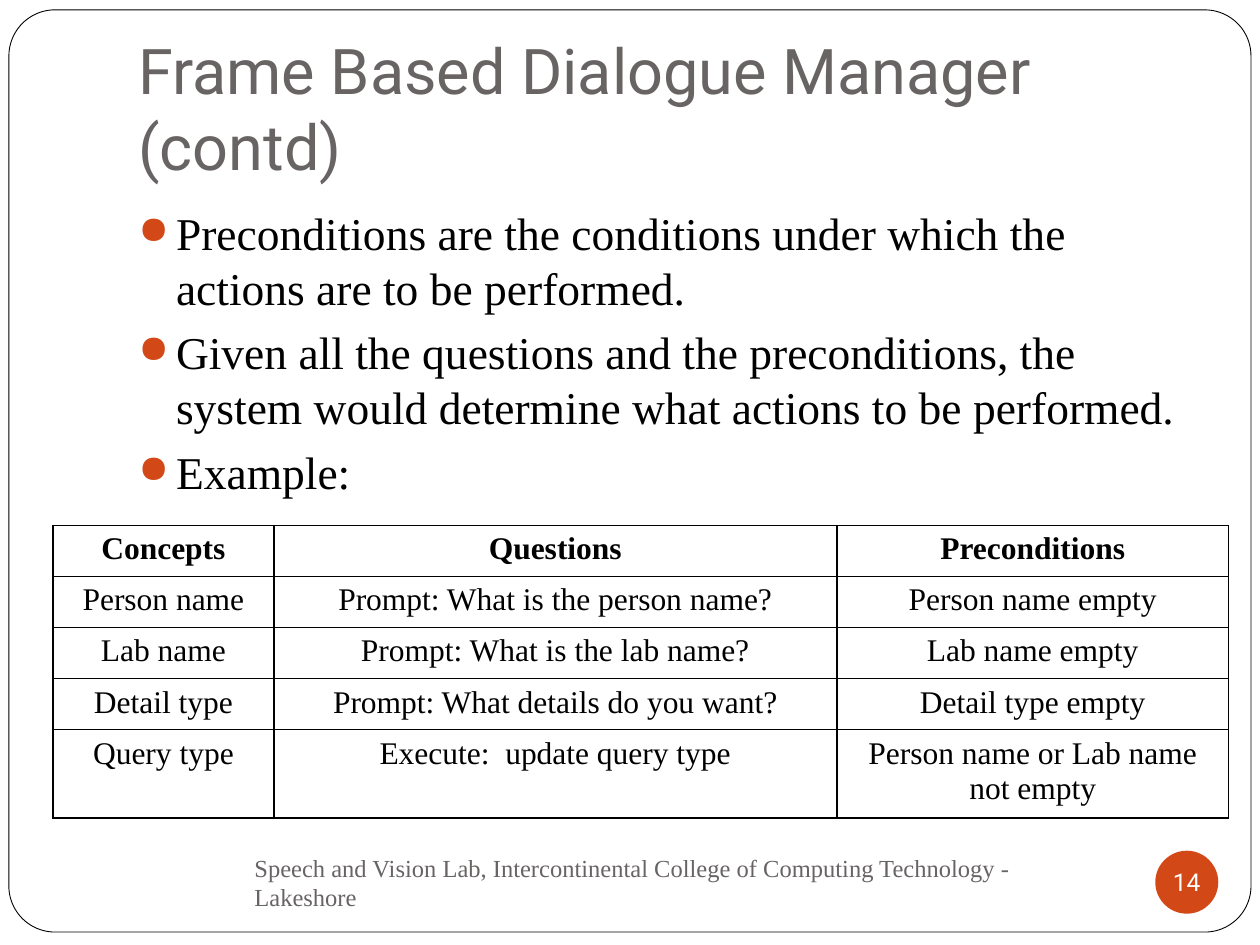
import lxml.etree
import pptx
import pptx.dml.color
import pptx.enum.shapes
import pptx.enum.text
import pptx.oxml.ns
import pptx.util
from pptx.util import Cm

RGBColor = pptx.dml.color.RGBColor
Shape = pptx.enum.shapes.MSO_SHAPE
Align = pptx.enum.text.PP_ALIGN
Anchor = pptx.enum.text.MSO_ANCHOR
qn = pptx.oxml.ns.qn

WHITE = RGBColor(0xFF, 0xFF, 0xFF)
BLACK = RGBColor(0, 0, 0)
GREY = RGBColor(0x69, 0x64, 0x64)
ORANGE = RGBColor(0xD3, 0x48, 0x17)
SERIF = "Times New Roman"
SANS = "Roboto"

TITLE = "Frame Based Dialogue Manager (contd)"
FOOTER = "Speech and Vision Lab, Intercontinental College of Computing Technology - Lakeshore"
POINTS = [
    "Preconditions are the conditions under which the actions are to be performed.",
    "Given all the questions and the preconditions, the system would determine "
    "what actions to be performed.",
    "Example:",
]
ROWS = [
    ("Concepts", "Questions", "Preconditions"),
    ("Person name", "Prompt: What is the person name?", "Person name empty"),
    ("Lab name", "Prompt: What is the lab name?", "Lab name empty"),
    ("Detail type", "Prompt: What details do you want?", "Detail type empty"),
    ("Query type", "Execute:  update query type", "Person name or Lab name not empty"),
]
COLUMN_WIDTHS = [Cm(4.45), Cm(11.35), Cm(7.9)]
ROW_HEIGHTS = [Cm(1.03)] * 4 + [Cm(1.67)]


def write(para, text, *, size, font=SERIF, color=BLACK, bold=False, align=Align.LEFT):
    para.alignment = align
    span = para.add_run()
    span.text = text
    span.font.size = pptx.util.Pt(size)
    span.font.name = font
    span.font.color.rgb = color
    span.font.bold = bold


def add_shape(page, kind, place, fill, line=None):
    shape = page.shapes.add_shape(kind, *place)
    shape.shadow.inherit = False
    shape.fill.solid()
    shape.fill.fore_color.rgb = fill
    if line is None:
        shape.line.fill.background()
    else:
        shape.line.color.rgb = line
        shape.line.width = pptx.util.Pt(0.5)
    return shape


def add_text_box(page, place, anchor):
    frame = page.shapes.add_textbox(*place).text_frame
    frame.word_wrap = True
    frame.vertical_anchor = anchor
    return frame


def add_bullet(para):
    """Give the paragraph a hanging orange dot."""
    properties = para._p.get_or_add_pPr()
    properties.set("marL", str(Cm(0.76)))
    properties.set("indent", str(-Cm(0.76)))
    color = lxml.etree.SubElement(properties, qn("a:buClr"))
    lxml.etree.SubElement(color, qn("a:srgbClr"), val=str(ORANGE))
    lxml.etree.SubElement(properties, qn("a:buSzPct"), val="85000")
    lxml.etree.SubElement(properties, qn("a:buChar"), char="●")


def add_bullets(page, place, points):
    frame = add_text_box(page, place, Anchor.TOP)
    for index, point in enumerate(points):
        para = frame.add_paragraph() if index else frame.paragraphs[0]
        para.space_before = pptx.util.Pt(5.8)
        add_bullet(para)
        write(para, point, size=26)


def add_borders(cell):
    properties = cell._tc.get_or_add_tcPr()
    for index, side in enumerate(("a:lnL", "a:lnR", "a:lnT", "a:lnB")):
        border = lxml.etree.Element(qn(side), w=str(pptx.util.Pt(1)))
        fill = lxml.etree.SubElement(border, qn("a:solidFill"))
        lxml.etree.SubElement(fill, qn("a:srgbClr"), val=str(BLACK))
        properties.insert(index, border)


def add_concept_table(page, left, top):
    table = page.shapes.add_table(
        len(ROWS), len(COLUMN_WIDTHS), left, top, sum(COLUMN_WIDTHS), sum(ROW_HEIGHTS)
    ).table
    for column, width in zip(table.columns, COLUMN_WIDTHS):
        column.width = width
    for index, (row, height, texts) in enumerate(zip(table.rows, ROW_HEIGHTS, ROWS)):
        row.height = height
        for cell, text in zip(row.cells, texts):
            cell.fill.solid()
            cell.fill.fore_color.rgb = WHITE
            add_borders(cell)
            write(cell.text_frame.paragraphs[0], text, size=18,
                  bold=index == 0, align=Align.CENTER)


def add_page_number(page, place, number):
    badge = add_shape(page, Shape.OVAL, place, ORANGE)
    frame = badge.text_frame
    frame.word_wrap = False
    frame.vertical_anchor = Anchor.MIDDLE
    frame.margin_left = frame.margin_right = frame.margin_top = frame.margin_bottom = 0
    write(frame.paragraphs[0], number, size=14, font=SANS, color=WHITE, align=Align.CENTER)


def main():
    deck = pptx.Presentation()
    deck.slide_width, deck.slide_height = Cm(25.4), Cm(19.05)
    page = deck.slides.add_slide(deck.slide_layouts[6])

    border = add_shape(page, Shape.ROUNDED_RECTANGLE,
                       (Cm(0.18), Cm(0.2), Cm(25.04), Cm(18.59)), WHITE, BLACK)
    border.adjustments[0] = 0.05

    title = add_text_box(page, (Cm(2.54), Cm(0.76), Cm(21.59), Cm(3.18)), Anchor.BOTTOM)
    title.margin_bottom = Cm(0.25)
    write(title.paragraphs[0], TITLE, size=36, font=SANS, color=GREY)

    footer = add_text_box(page, (Cm(4.88), Cm(17.15), Cm(16.3), Cm(1.27)), Anchor.MIDDLE)
    write(footer.paragraphs[0], FOOTER, size=14, color=GREY)

    add_page_number(page, (Cm(23.29), Cm(17.15), Cm(1.27), Cm(1.27)), "14")
    add_bullets(page, (Cm(2.54), Cm(4.01), Cm(21.59), Cm(12.7)), POINTS)
    add_concept_table(page, Cm(1.07), Cm(10.59))
    deck.save("out.pptx")


if __name__ == "__main__":
    main()
